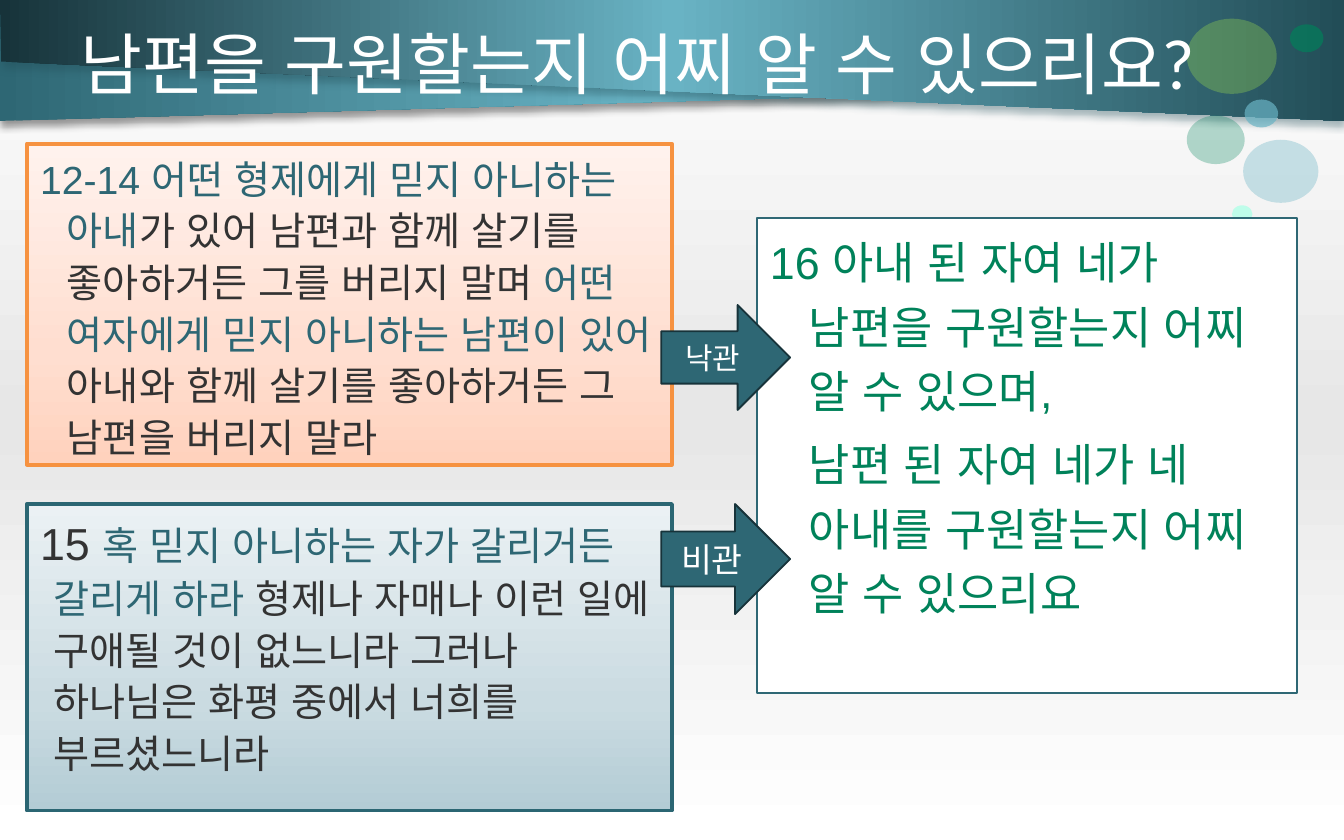
from dataclasses import dataclass

from lxml.etree import SubElement
from pptx import Presentation
from pptx.dml.color import RGBColor
from pptx.enum.lang import MSO_LANGUAGE_ID
from pptx.enum.shapes import MSO_SHAPE
from pptx.enum.text import MSO_ANCHOR, PP_ALIGN
from pptx.oxml.ns import qn
from pptx.util import Pt


@dataclass(frozen=True)
class Theme:
    white: str = "FFFFFF"
    gray: str = "E7E7E7"
    text: str = "333333"
    teal: str = "2E6774"
    teal_line: str = "2B6673"
    dark: str = "17333A"
    deep: str = "224D57"
    sky: str = "69B3C4"
    green: str = "00825A"
    lime: str = "93D151"
    mint: str = "B3FFE8"
    orange: str = "F69240"
    peach: tuple = ((0, "FFD2BD"), (35, "FFDED0"), (100, "FFF2ED"))
    mist: tuple = ((0, "B3CCD5"), (35, "CADBE1"), (100, "EBF1F4"))
    title_font: str = "Lato"
    body_font: str = "Arial"
    title: int = 36
    large: int = 24
    body: int = 21
    medium: int = 18
    small: int = 16


T = Theme()


def rgb(code):
    return RGBColor.from_string(code)


def set_gradient(fill, element, stops, angle=0):
    """Fill with any number of (percent, colour) stops."""
    fill.gradient()
    fill.gradient_angle = angle
    gs_list = element.find(".//" + qn("a:gsLst"))
    for gs in list(gs_list):
        gs_list.remove(gs)
    for pos, color in stops:
        gs = SubElement(gs_list, qn("a:gs"), pos=str(pos * 1000))
        SubElement(gs, qn("a:srgbClr"), val=color)


def add_alpha(color, percent):
    SubElement(color, qn("a:alpha"), val=str(percent * 1000))


def style(sp, fill, line=None, width=1):
    """Fill is one colour or a tuple of gradient stops, first stop at the bottom."""
    sp.shadow.inherit = False
    if isinstance(fill, str):
        sp.fill.solid()
        sp.fill.fore_color.rgb = rgb(fill)
    else:
        set_gradient(sp.fill, sp.element, fill, 90)
    if line:
        sp.line.color.rgb = rgb(line)
        sp.line.width = Pt(width)
    else:
        sp.line.fill.background()


def add_band(s, points, stops, shadow):
    start, *rest = [(Pt(x), Pt(y)) for x, y in points]
    builder = s.shapes.build_freeform(*start, scale=1.0)
    builder.add_line_segments(rest, close=True)
    sp = builder.convert_to_shape()
    style(sp, T.sky)
    set_gradient(sp.fill, sp.element, stops)
    effects = sp.element.spPr.find(qn("a:effectLst"))
    outer = SubElement(effects, qn("a:outerShdw"), blurRad=str(Pt(4)),
                       dist=str(Pt(3)), dir="5400000", rotWithShape="0")
    add_alpha(SubElement(outer, qn("a:srgbClr"), val=shadow), 40)


def add_shape(s, kind, box):
    return s.shapes.add_shape(kind, *[Pt(v) for v in box])


def add_bubble(s, box, color, alpha):
    sp = add_shape(s, MSO_SHAPE.OVAL, box)
    style(sp, color)
    add_alpha(sp.element.spPr.find(".//" + qn("a:srgbClr")), alpha)


def add_run(p, text, color, size, font=T.body_font):
    r = p.add_run()
    r.text = text
    values = {"name": font, "size": Pt(size), "language_id": MSO_LANGUAGE_ID.KOREAN}
    for name, value in values.items():
        setattr(r.font, name, value)
    r.font.color.rgb = rgb(color)


def set_frame(sp, anchor):
    tf = sp.text_frame
    for name, value in {"word_wrap": True, "vertical_anchor": anchor}.items():
        setattr(tf, name, value)
    return tf


def add_title(s, text):
    sp = s.shapes.add_textbox(Pt(36), Pt(5), Pt(648), Pt(57))
    tf = set_frame(sp, MSO_ANCHOR.MIDDLE)
    add_run(tf.paragraphs[0], text, T.white, T.title, T.title_font)


def add_passage(s, box, look, paragraphs, spacing):
    """Each paragraph is (left margin, first-line indent, runs)."""
    sp = add_shape(s, MSO_SHAPE.RECTANGLE, box)
    style(sp, *look)
    tf = set_frame(sp, MSO_ANCHOR.TOP)
    for i, (margin, indent, runs) in enumerate(paragraphs):
        p = tf.add_paragraph() if i else tf.paragraphs[0]
        values = {"alignment": PP_ALIGN.LEFT, "line_spacing": spacing,
                  "space_before": Pt(4.5)}
        for name, value in values.items():
            setattr(p, name, value)
        pPr = p._p.get_or_add_pPr()
        pPr.set("marL", str(Pt(margin)))
        pPr.set("indent", str(Pt(indent)))
        for run in runs:
            add_run(p, *run)


def add_arrow(s, top, height, text, size):
    sp = add_shape(s, MSO_SHAPE.RIGHT_ARROW, (354.3, top, 69, height))
    style(sp, T.teal, T.dark)
    p = set_frame(sp, MSO_ANCHOR.MIDDLE).paragraphs[0]
    p.alignment = PP_ALIGN.CENTER
    add_run(p, text, T.white, size)


def main():
    prs = Presentation()
    prs.slide_width, prs.slide_height = Pt(720), Pt(450)
    s = prs.slides.add_slide(prs.slide_layouts[6])

    # Background and header bands
    set_gradient(s.background.fill, s.element,
                 ((0, T.white), (50, T.gray), (100, T.white)), 270)
    add_band(s, ((0, 0), (696, 44.6), (0, 64.8)),
             ((0, T.teal), (50, T.sky), (100, T.deep)), "000000")
    add_band(s, ((720, 0), (0, 0), (0.7, 33), (720, 64.8)),
             ((0, T.dark), (50, T.sky), (100, T.deep)), T.deep)

    # Bubbles
    for box, color, alpha in (
        ((660, 110, 11, 9.4), T.mint, 82),
        ((635.8, 61.9, 31, 26), T.green, 29),
        ((666, 74.9, 40.3, 33.8), T.sky, 35),
        ((666.7, 53.3, 18, 15), T.sky, 70),
        ((635.8, 10, 48.2, 40.3), T.lime, 36),
        ((691, 13, 18, 15), T.green, 65),
    ):
        add_bubble(s, box, color, alpha)

    add_title(s, "남편을 구원할는지 어찌 알 수 있으리요?")

    # Verses on the left
    add_passage(s, (14.4, 77, 345.6, 172), (T.peach, T.orange, 2), [(14.4, -14.4, [
        ("12-14 어떤 형제에게 믿지 아니하는 아내", T.teal, T.body),
        ("가 있어 남편과 함께 살기를 좋아하거든 그를 버리지 말며 ", T.text, T.body),
        ("어떤 여자에게 믿지 아니하는 남편이 있어", T.teal, T.body),
        (" 아내와 함께 살기를 좋아하거든 그 남편을 버리지 말라", T.text, T.body),
    ])], 1.1)
    add_passage(s, (14.4, 270, 345.6, 164.2), (T.mist, T.teal_line, 2), [(7.2, -7.2, [
        ("15 ", T.text, T.large),
        ("혹 믿지 아니하는 자가 갈리거든 갈리게 하라 ", T.teal, T.body),
        ("형제나 자매나 이런 일에 구애될 것이 없느니라 그러나 "
         "하나님은 화평 중에서 너희를 부르셨느니라", T.text, T.body),
    ])], 1.1)

    # Question on the right
    add_passage(s, (405.4, 116.6, 289.4, 254.9), (T.white, T.teal, 1), [
        (20.9, -20.9, [("16 아내 된 자여 네가 남편을 구원할는지 어찌 알 수 있으며,",
                        T.green, T.large)]),
        (20.9, 0, [("남편 된 자여 네가 네 아내를 구원할는지 어찌 알 수 있으리요",
                    T.green, T.large)]),
    ], 1.2)

    # Arrows between verses and question
    add_arrow(s, 163.4, 56.2, "낙관", T.small)
    add_arrow(s, 270, 59, "비관", T.medium)

    prs.save("out.pptx")


if __name__ == "__main__":
    main()
